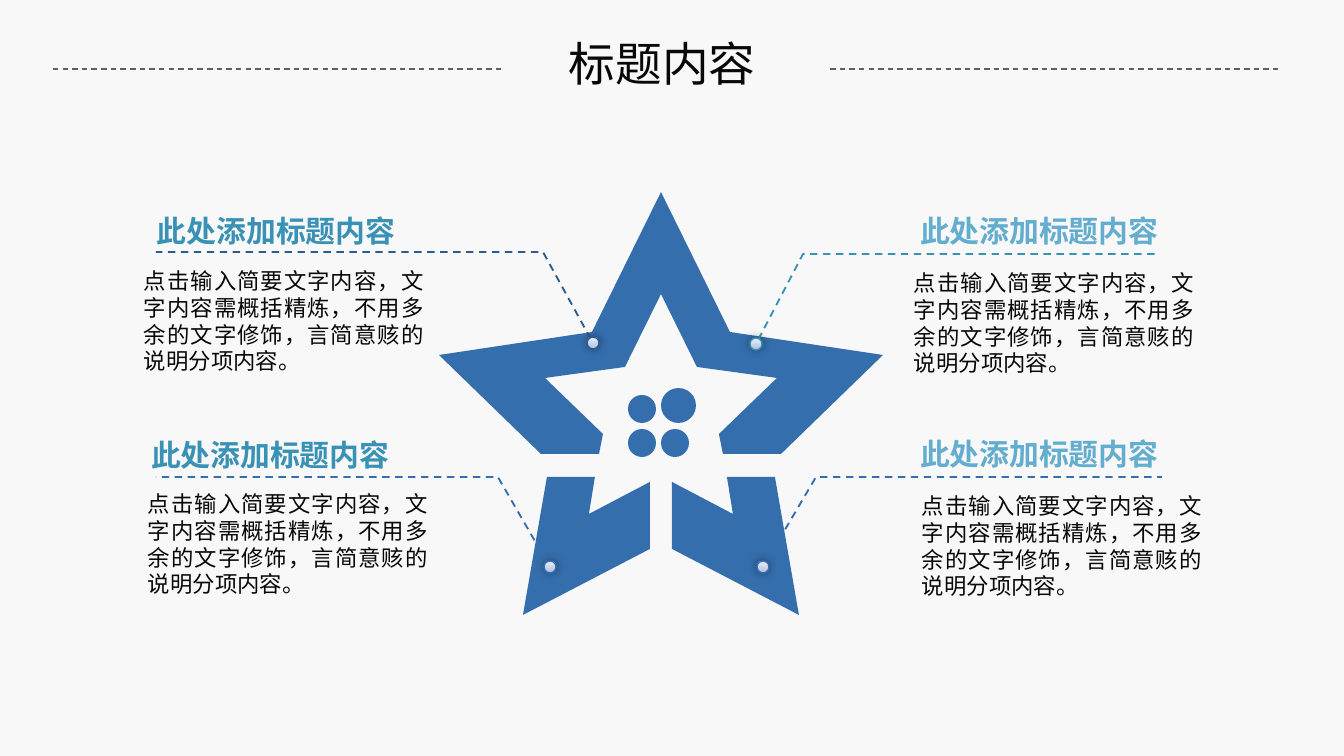
from lxml.etree import SubElement
from copy import deepcopy
from pptx import Presentation
from pptx.dml.color import RGBColor
from pptx.enum.dml import MSO_LINE_DASH_STYLE as Dash
from pptx.enum.shapes import MSO_CONNECTOR as Connector, MSO_SHAPE as Preset
from pptx.enum.text import MSO_ANCHOR as Anchor, MSO_AUTO_SIZE as AutoSize, PP_ALIGN as Align
from pptx.oxml.ns import qn
from pptx.util import Pt

SCALE = 9144000 / 1344
FONT = "Noto Sans CJK SC"
COLORS = {
    "paper": "F8F8F8", "ink": "080808", "rule": "5F5F5F", "star": "356EAD",
    "navy": "2C5B8F", "teal": "3992B5", "sky": "63AECE", "shadow": "000000",
    "dot dark": "ABBDE4", "dot middle": "C5D1EB", "dot light": "E8EDF8",
}
DOT_STOPS = [(0, "dot dark"), (0.35, "dot middle"), (1, "dot light")]
HEADING = "此处添加标题内容"
BODY = "点击输入简要文字内容，文字内容需概括精炼，不用多余的文字修饰，言简意赅的说明分项内容。"
MIRROR = 1322
STAR_PARTS = [
    [(672, 482), (672, 549), (799, 615), (775, 477), (727, 477), (733, 514)],
    [(730, 332), (661, 192), (661, 294), (697, 367), (777, 378),
     (719, 434), (723, 454), (781, 454), (883, 355)],
]
CENTER_CIRCLES = [(628, 395, 28), (661, 388, 35), (628, 429, 28), (661, 429, 28)]
CALLOUTS = [
    ((144, 188, 290), "teal", (134, 262), "navy", [(593, 343), (543, 252), (156, 252)]),
    ((907, 188, 277), "sky", (904, 264), "teal", [(756, 344), (803, 254), (1158, 254)]),
    ((138, 412, 290), "teal", (138, 485), "star", [(550, 567), (498, 477), (156, 477)]),
    ((907, 411, 277), "sky", (912, 487), "star", [(763, 567), (816, 477), (1162, 477)]),
]


def emu(pixels):
    return round(pixels * SCALE)


def rgb(name):
    return RGBColor.from_string(COLORS[name])


def apply(target, values):
    for name, value in values.items():
        setattr(target, name, value)


class SlideBuilder:
    def __init__(self, slide):
        self.slide = slide
        self.shapes = slide.shapes
        fill = slide.background.fill
        fill.solid()
        fill.fore_color.rgb = rgb("paper")

    def set_text(self, shape, text, box, size, color, bold=False,
                 align=Align.LEFT, spacing=1.0, insets=(13, 7)):
        apply(shape, dict(zip(("left", "top", "width", "height"), map(emu, box))))
        horizontal, vertical = map(emu, insets)
        frame = shape.text_frame
        apply(frame, {
            "word_wrap": True, "auto_size": AutoSize.SHAPE_TO_FIT_TEXT,
            "vertical_anchor": Anchor.TOP,
            "margin_left": horizontal, "margin_right": horizontal,
            "margin_top": vertical, "margin_bottom": vertical,
        })
        paragraph = frame.paragraphs[0]
        apply(paragraph, {"alignment": align, "line_spacing": spacing})
        run = paragraph.add_run()
        run.text = text
        apply(run.font, {"name": FONT, "size": Pt(size), "bold": bold})
        run.font.color.rgb = rgb(color)
        SubElement(run.font._element, qn("a:ea"), typeface=FONT)

    def title(self, text, box):
        self.set_text(self.shapes.title, text, box, 25, "ink", align=Align.CENTER)

    def text(self, text, box, size, color, **style):
        self.set_text(self.shapes.add_textbox(0, 0, 0, 0), text, box, size, color, **style)

    def stroke(self, line, color, width, dash=None):
        line.color.rgb = rgb(color)
        apply(line, {"width": Pt(width), "dash_style": dash})

    def rule(self, left, top, width):
        connector = self.shapes.add_connector(
            Connector.STRAIGHT, emu(left), emu(top), emu(left + width), emu(top))
        self.stroke(connector.line, "rule", 0.75, Dash.DASH)
        SubElement(connector._element.spPr, qn("a:effectLst"))

    def outline(self, points, close):
        builder = self.shapes.build_freeform(*points[0], scale=SCALE)
        builder.add_line_segments(points[1:], close=close)
        shape = builder.convert_to_shape()
        shape.shadow.inherit = False
        return shape

    def paint(self, shape, color):
        shape.fill.solid()
        shape.fill.fore_color.rgb = rgb(color)
        shape.line.fill.background()
        return shape

    def polygon(self, points, color):
        return self.paint(self.outline(points, True), color)

    def ellipse(self, left, top, size):
        shape = self.shapes.add_shape(Preset.OVAL, emu(left), emu(top), emu(size), emu(size))
        shape.shadow.inherit = False
        return shape

    def circle(self, left, top, size, color):
        return self.paint(self.ellipse(left, top, size), color)

    def leader(self, points, color):
        shape = self.outline(points, False)
        shape.fill.background()
        self.stroke(shape.line, color, 1, Dash.DASH)
        SubElement(shape._element.spPr.find(qn("a:ln")), qn("a:headEnd"), type="oval")
        return shape

    def dot(self, center, color):
        shape = self.ellipse(center[0] - 6, center[1] - 6, 12)
        shape.fill.gradient()
        shape.fill.gradient_angle = 90
        first = shape.fill.gradient_stops[0]._gs
        first.addnext(deepcopy(first))
        for stop, (position, tint) in zip(shape.fill.gradient_stops, DOT_STOPS):
            stop.position = position
            stop.color.rgb = rgb(tint)
        self.stroke(shape.line, color, 0.75)
        effects = shape._element.spPr.find(qn("a:effectLst"))
        shadow = SubElement(effects, qn("a:outerShdw"), blurRad=str(Pt(5)), dist="0", dir="0")
        black = SubElement(shadow, qn("a:srgbClr"), val=COLORS["shadow"])
        SubElement(black, qn("a:alpha"), val="40000")
        return shape

    def group(self, members):
        self.shapes.add_group_shape(members)


def main():
    presentation = Presentation()
    apply(presentation, {"slide_width": emu(1344), "slide_height": emu(756)})
    builder = SlideBuilder(presentation.slides.add_slide(presentation.slide_layouts[5]))
    builder.title("标题内容", (546, 28, 232, 70))
    for left in (830, 53):
        builder.rule(left, 69, 450)

    star = []
    for part in STAR_PARTS:
        mirrored = [(MIRROR - x, y) for x, y in part]
        star += [builder.polygon(points, "star") for points in (part, mirrored)]
    star += [builder.circle(*circle, "star") for circle in CENTER_CIRCLES]
    builder.group(star)

    for heading, heading_color, body, line_color, points in CALLOUTS:
        builder.text(HEADING, (*heading, 62), 16, heading_color, bold=True, spacing=1.5)
        builder.group([builder.leader(points, line_color), builder.dot(points[0], line_color)])
        builder.text(BODY, (*body, 300, 118), 12, "ink", align=Align.JUSTIFY, insets=(10, 5))

    presentation.save("out.pptx")


if __name__ == "__main__":
    main()
